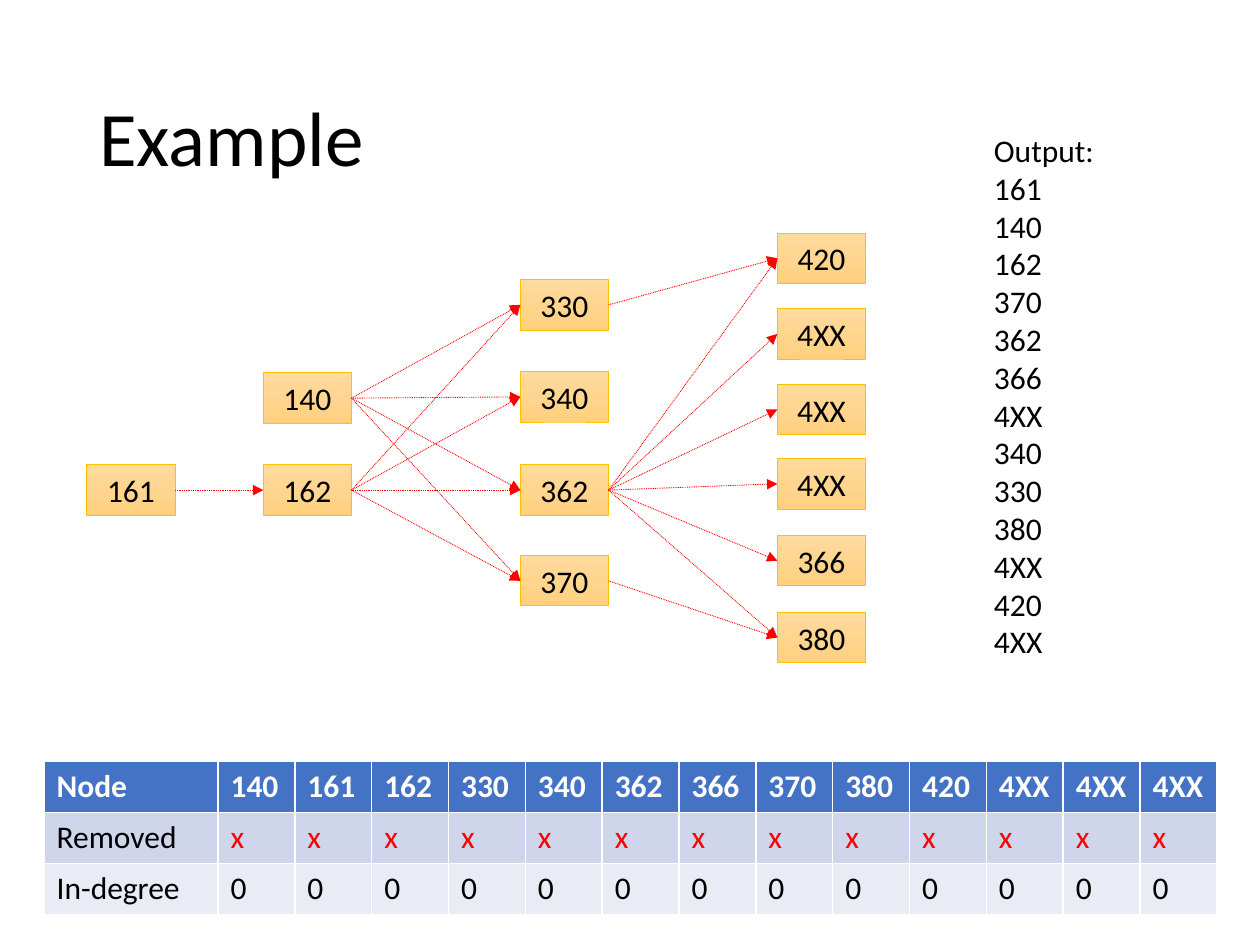
from copy import deepcopy
from dataclasses import dataclass

from lxml.etree import SubElement
from pptx import Presentation
from pptx.dml.color import RGBColor
from pptx.enum.dml import MSO_LINE
from pptx.enum.shapes import MSO_CONNECTOR, MSO_SHAPE
from pptx.enum.text import MSO_ANCHOR, MSO_AUTO_SIZE, PP_ALIGN
from pptx.oxml.ns import qn
from pptx.util import Inches, Pt

FONT = "Calibri"
BLACK = RGBColor(0x00, 0x00, 0x00)
WHITE = RGBColor(0xFF, 0xFF, 0xFF)
RED = RGBColor(0xFF, 0x00, 0x00)
GOLD = RGBColor(0xFF, 0xC0, 0x00)
BLUE = RGBColor(0x44, 0x72, 0xC4)
BAND = RGBColor(0xCF, 0xD5, 0xEA)
PALE = RGBColor(0xE9, 0xEB, 0xF5)
GLOW = (RGBColor(0xFF, 0xDB, 0x9E), RGBColor(0xFF, 0xD5, 0x90),
        RGBColor(0xFF, 0xD0, 0x7C))
LEFT, RIGHT = 1, 3  # connection sites of a rectangle


@dataclass
class Level:
    left: float
    nodes: dict[str, float]  # label, with a letter for twins, and top


@dataclass
class Row:
    name: str
    marks: list[str]
    fill: RGBColor
    head: RGBColor  # text colour of the first cell
    ink: RGBColor   # text colour of the other cells
    bold: bool = False


LEVELS = [
    Level(0.69, {"161": 3.69}),
    Level(2.09, {"140": 2.96, "162": 3.69}),
    Level(4.13, {"330": 2.22, "340": 2.95, "362": 3.69, "370": 4.41}),
    Level(6.17, {"420": 1.85, "4XXa": 2.45, "4XXb": 3.05, "4XXc": 3.64,
                 "366": 4.25, "380": 4.86}),
]
EDGES = {
    "161": ["162"],
    "140": ["330", "340", "362", "370"],
    "162": ["330", "340", "362", "370"],
    "330": ["420"],
    "362": ["420", "4XXa", "4XXb", "4XXc", "366", "380"],
    "370": ["380"],
}
OUTPUT = ["Output:", "161", "140", "162", "370", "362", "366", "4XX", "340",
          "330", "380", "4XX", "420", "4XX"]
NODES = ["140", "161", "162", "330", "340", "362", "366", "370", "380", "420",
         "4XX", "4XX", "4XX"]
ROWS = [
    Row("Node", NODES, BLUE, WHITE, WHITE, True),
    Row("Removed", ["x"] * len(NODES), BAND, BLACK, RED),
    Row("In-degree", ["0"] * len(NODES), PALE, BLACK, BLACK),
]


def add_run(para, text: str, size: int = 18, ink: RGBColor = BLACK,
            bold: bool = False) -> None:
    run = para.add_run()
    run.text = text
    run.font.name = FONT
    run.font.size = Pt(size)
    run.font.bold = bold
    run.font.color.rgb = ink


def add_text(slide, box: tuple, lines: list[str], size: int = 18):
    shape = slide.shapes.add_textbox(*map(Inches, box))
    frame = shape.text_frame
    frame.word_wrap = True
    for i, line in enumerate(lines):
        para = frame.add_paragraph() if i else frame.paragraphs[0]
        add_run(para, line, size)
    return frame


def add_node(slide, label: str, left: float, top: float):
    node = slide.shapes.add_shape(MSO_SHAPE.RECTANGLE, Inches(left), Inches(top),
                                  Inches(0.7), Inches(0.4))
    node.shadow.inherit = False
    node.line.color.rgb = GOLD
    node.line.width = Pt(0.5)
    # Three-stop fill running from top to bottom
    node.fill.gradient()
    node.fill.gradient_angle = 270
    stops = node.fill.gradient_stops[0]._gs.getparent()
    stops.insert(1, deepcopy(stops[0]))
    for i, (stop, tone) in enumerate(zip(node.fill.gradient_stops, GLOW)):
        stop.position = i / 2
        stop.color.rgb = tone
    frame = node.text_frame
    frame.vertical_anchor = MSO_ANCHOR.MIDDLE
    para = frame.paragraphs[0]
    para.alignment = PP_ALIGN.CENTER
    add_run(para, label)
    return node


def add_edge(slide, start, end) -> None:
    edge = slide.shapes.add_connector(MSO_CONNECTOR.STRAIGHT, 0, 0, 0, 0)
    edge.begin_connect(start, RIGHT)
    edge.end_connect(end, LEFT)
    edge.line.color.rgb = RED
    edge.line.width = Pt(0.5)
    edge.line.dash_style = MSO_LINE.ROUND_DOT
    props = edge._element.spPr
    SubElement(props.find(qn("a:ln")), qn("a:tailEnd"), type="triangle")
    SubElement(props, qn("a:effectLst"))


def add_grid(slide, rows: list[Row]) -> None:
    count = len(rows[0].marks) + 1
    table = slide.shapes.add_table(len(rows), count, Inches(0.35), Inches(6.04),
                                   Inches(9.34), Inches(1.22)).table
    for i, col in enumerate(table.columns):
        col.width = Inches(0.61 if i else 1.38)
    for r, row in enumerate(rows):
        for c, text in enumerate([row.name, *row.marks]):
            cell = table.cell(r, c)
            cell.fill.solid()
            cell.fill.fore_color.rgb = row.fill
            add_run(cell.text_frame.paragraphs[0], text,
                    ink=row.ink if c else row.head, bold=row.bold)


def main() -> None:
    deck = Presentation()
    deck.slide_width, deck.slide_height = Inches(10), Inches(7.5)
    slide = deck.slides.add_slide(deck.slide_layouts[6])

    # Title
    title = add_text(slide, (0.69, 0.4, 8.62, 1.45), ["Example"], 44)
    title.vertical_anchor = MSO_ANCHOR.MIDDLE
    title.paragraphs[0].line_spacing = 0.9

    # Graph
    nodes = {key: add_node(slide, key[:3], level.left, top)
             for level in LEVELS for key, top in level.nodes.items()}
    for start, ends in EDGES.items():
        for end in ends:
            add_edge(slide, nodes[start], nodes[end])

    # Output list
    order = add_text(slide, (7.79, 0.99, 1.9, 4.34), OUTPUT)
    order.auto_size = MSO_AUTO_SIZE.SHAPE_TO_FIT_TEXT

    # Table of nodes
    add_grid(slide, ROWS)
    deck.save("out.pptx")


if __name__ == "__main__":
    main()
